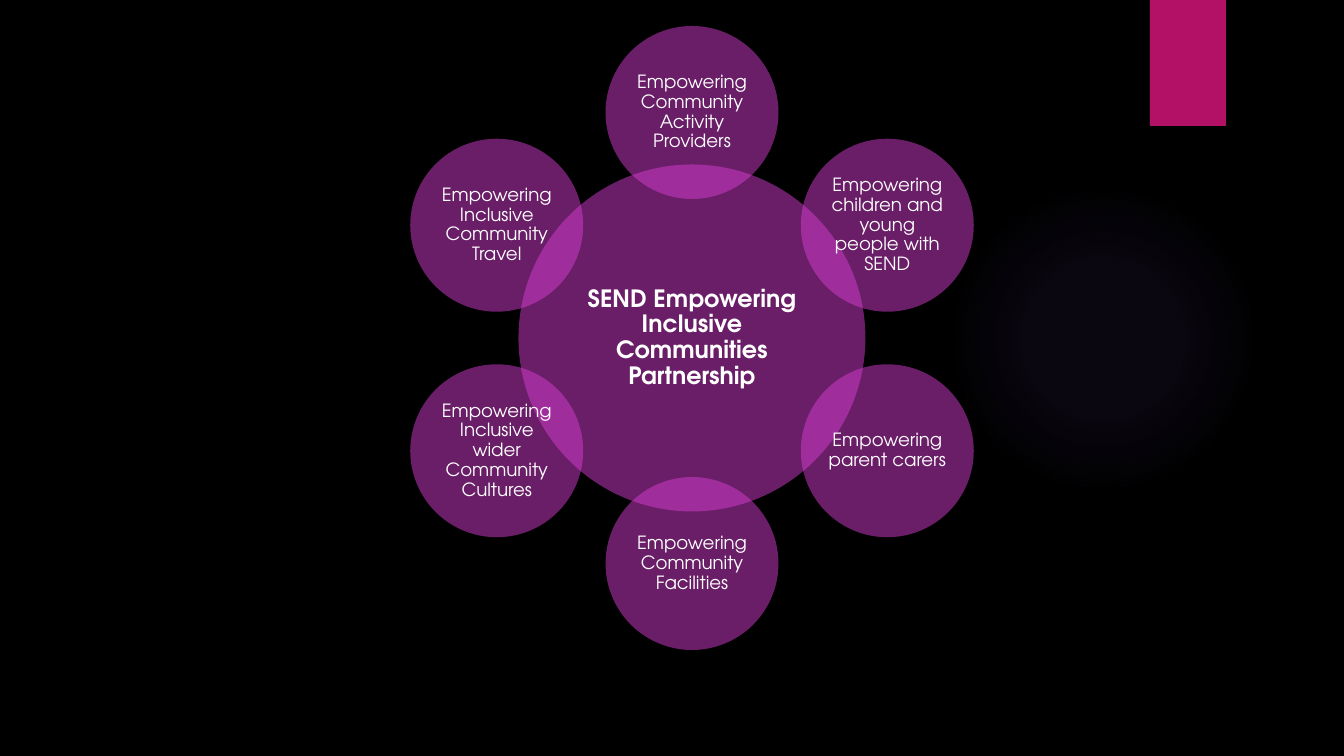
"""Build a slide showing the SEND partnership surrounded by its six strands."""
from dataclasses import dataclass
from math import cos, radians, sin

from lxml import etree
from pptx import Presentation
from pptx.dml.color import RGBColor
from pptx.enum.shapes import MSO_SHAPE
from pptx.enum.text import MSO_ANCHOR, PP_ALIGN
from pptx.oxml import parse_xml
from pptx.oxml.ns import nsdecls, qn
from pptx.util import Pt

OVAL, RECTANGLE = MSO_SHAPE.OVAL, MSO_SHAPE.RECTANGLE
MIDDLE, CENTER = MSO_ANCHOR.MIDDLE, PP_ALIGN.CENTER

HUB = "SEND Empowering Inclusive Communities Partnership"
STRANDS = [
    "Empowering Community Activity Providers",
    "Empowering children and young people with SEND",
    "Empowering parent carers",
    "Empowering Community Facilities",
    "Empowering Inclusive wider Community Cultures",
    "Empowering Inclusive Community Travel",
]

EMU_PER_INCH, PX_PER_INCH = 914400, 100.8
SLIDE_WIDTH, SLIDE_HEIGHT = 1344, 756
CENTER_X, CENTER_Y, ORBIT = 692, 338, 225.5
HUB_SIZE, STRAND_SIZE, INSET = 347, 173, 2
GLOW = (948, 184, 310, 310)
TAB = (1150, 0, 76, 126)
GLOW_STOPS = [(0, 7), (36, 6), (69, 0)]


@dataclass(frozen=True)
class Theme:
    """Colours, font and type sizes."""
    background: str = "000000"
    glow: str = "9B6BF2"
    tab: str = "B31166"
    circle: str = "D53DD0"
    text: str = "FFFFFF"
    font: str = "TeX Gyre Adventor"
    hub_size: int = 17
    strand_size: int = 13
    circle_opacity: int = 50


THEME = Theme()


def px(length):
    """Turn pixels into EMU."""
    return round(length * EMU_PER_INCH / PX_PER_INCH)


def add_plain_shape(page, kind, frame, color):
    """Add a shape with a solid fill, no line and no shadow."""
    shape = page.shapes.add_shape(kind, *map(px, frame))
    shape.shadow.inherit = False
    shape.fill.solid()
    shape.fill.fore_color.rgb = RGBColor.from_string(color)
    shape.line.fill.background()
    return shape


def add_glow(page):
    """Add the faint radial glow."""
    glow = add_plain_shape(page, OVAL, GLOW, THEME.glow)
    stops = "".join(
        f'<a:gs pos="{position * 1000}"><a:srgbClr val="{THEME.glow}">'
        f'<a:alpha val="{opacity * 1000}"/></a:srgbClr></a:gs>'
        for position, opacity in GLOW_STOPS
    )
    gradient = parse_xml(
        f'<a:gradFill {nsdecls("a")}><a:gsLst>{stops}</a:gsLst><a:path path="circle">'
        '<a:fillToRect l="50000" t="50000" r="50000" b="50000"/></a:path></a:gradFill>'
    )
    properties = glow.element.spPr
    properties.replace(properties.find(qn("a:solidFill")), gradient)


def add_circle(page, text, x, y, diameter, size, bold=False):
    """Add a translucent labelled circle centred on a point."""
    frame = (x - diameter / 2, y - diameter / 2, diameter, diameter)
    circle = add_plain_shape(page, OVAL, frame, THEME.circle)
    color = circle.element.spPr.find(qn("a:solidFill")).find(qn("a:srgbClr"))
    etree.SubElement(color, qn("a:alpha"), val=str(THEME.circle_opacity * 1000))

    box = circle.text_frame
    box.word_wrap = True
    box.vertical_anchor = MIDDLE
    box.margin_left = box.margin_right = px(INSET)
    box.margin_top = box.margin_bottom = px(INSET)
    box.text = text
    para = box.paragraphs[0]
    para.alignment = CENTER
    para.line_spacing = 0.9
    font = para.runs[0].font
    font.name = THEME.font
    font.size = Pt(size)
    font.bold = bold
    font.color.rgb = RGBColor.from_string(THEME.text)


def main():
    """Build and save the deck."""
    deck = Presentation()
    deck.slide_width, deck.slide_height = px(SLIDE_WIDTH), px(SLIDE_HEIGHT)
    page = deck.slides.add_slide(deck.slide_layouts[6])
    page.background.fill.solid()
    page.background.fill.fore_color.rgb = RGBColor.from_string(THEME.background)

    add_glow(page)
    add_plain_shape(page, RECTANGLE, TAB, THEME.tab)
    add_circle(page, HUB, CENTER_X, CENTER_Y, HUB_SIZE, THEME.hub_size, bold=True)
    for index, strand in enumerate(STRANDS):
        angle = radians(360 / len(STRANDS) * index)
        x = CENTER_X + ORBIT * sin(angle)
        y = CENTER_Y - ORBIT * cos(angle)
        add_circle(page, strand, x, y, STRAND_SIZE, THEME.strand_size)

    deck.save("out.pptx")


if __name__ == "__main__":
    main()
